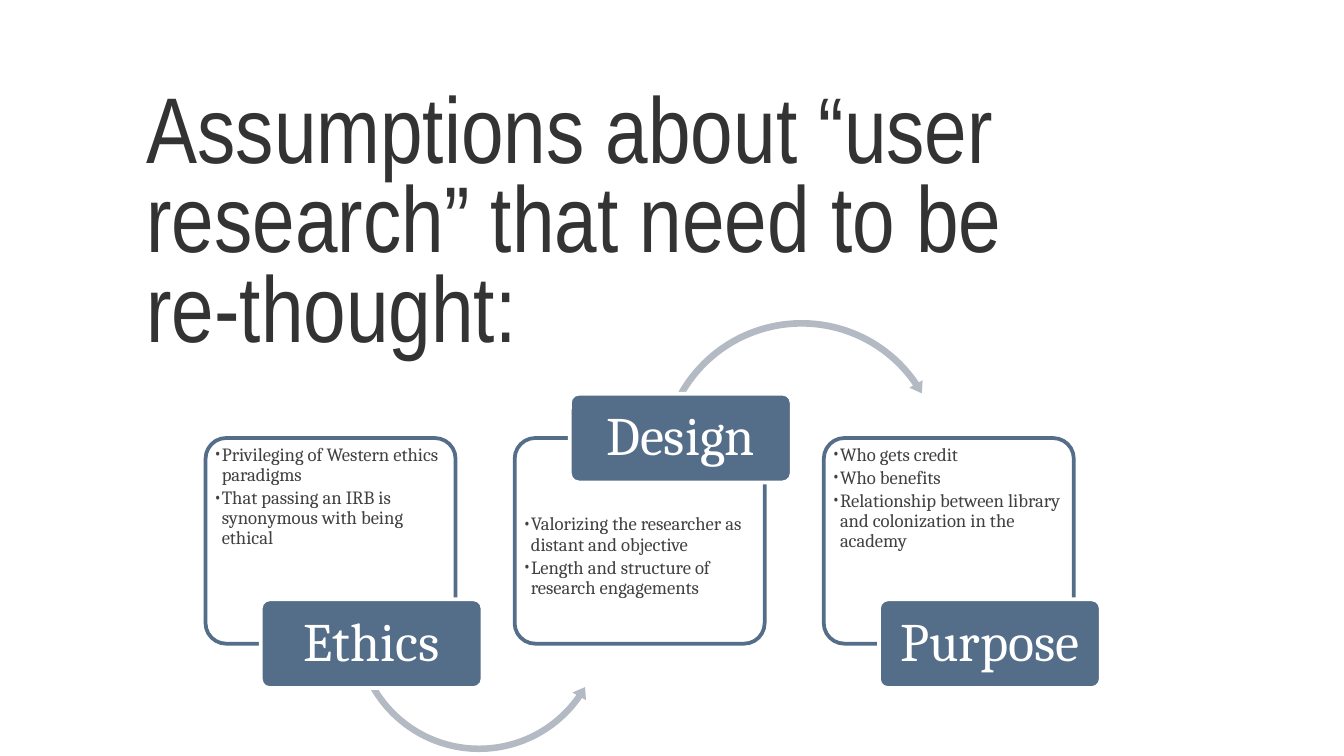
from dataclasses import dataclass
from typing import Optional

from lxml import etree
from pptx import Presentation
from pptx.dml.color import RGBColor
from pptx.enum.shapes import MSO_SHAPE
from pptx.enum.text import MSO_ANCHOR, MSO_AUTO_SIZE, PP_ALIGN
from pptx.oxml.ns import qn
from pptx.util import Inches, Pt

ROUNDED = MSO_SHAPE.ROUNDED_RECTANGLE
ARROW_OVER = MSO_SHAPE.CIRCULAR_ARROW
ARROW_UNDER = MSO_SHAPE.LEFT_CIRCULAR_ARROW
TOP, MIDDLE = MSO_ANCHOR.TOP, MSO_ANCHOR.MIDDLE
LEFT, CENTER = PP_ALIGN.LEFT, PP_ALIGN.CENTER
NO_FIT = MSO_AUTO_SIZE.NONE

WHITE = RGBColor(0xFF, 0xFF, 0xFF)
SLATE = RGBColor(0x54, 0x6D, 0x89)
SILVER = RGBColor(0xB4, 0xBA, 0xC4)
CHARCOAL = RGBColor(0x33, 0x33, 0x33)
BODY_GRAY = RGBColor(0x41, 0x40, 0x42)

TITLE_FONT, BODY_FONT = "Arial Narrow", "Cambria"
TITLE_LINES = ("Assumptions about “user research” that need to be", "re-thought:")
FIRST_LEFT, STEP = 1.53, 2.3
PANEL_TOP = 3.26


@dataclass(frozen=True)
class Arrow:
    kind: int
    left: float
    top: float
    size: float
    adjustments: tuple[float, ...]


@dataclass(frozen=True)
class Step:
    name: str
    points: tuple[str, ...]
    text_top: float
    label_top: float
    arrow: Optional[Arrow] = None


STEPS = (
    Step("Ethics",
         ("Privileging of Western ethics paradigms",
          "That passing an IRB is synonymous with being ethical"),
         3.29, 4.46,
         Arrow(ARROW_UNDER, 2.6, 3.7, 1.93, (0.025, 3.09, 20.85, 90.25, 0.03))),
    Step("Design",
         ("Valorizing the researcher as distant and objective",
          "Length and structure of research engagements"),
         3.81, 2.93,
         Arrow(ARROW_OVER, 4.88, 2.35, 2.17, (0.023, 2.74, 195.51, 125.76, 0.026))),
    Step("Purpose",
         ("Who gets credit", "Who benefits",
          "Relationship between library and colonization in the academy"),
         3.29, 4.46),
)


def set_frame(frame, anchor, horizontal: float, vertical: float) -> None:
    frame.word_wrap = True
    frame.auto_size = NO_FIT
    frame.vertical_anchor = anchor
    frame.margin_left = frame.margin_right = Inches(horizontal)
    frame.margin_top = frame.margin_bottom = Inches(vertical)


def write_lines(frame, lines: tuple[str, ...], font: str, size: float,
                color: RGBColor, align, spacing: float) -> None:
    for index, line in enumerate(lines):
        para = frame.add_paragraph() if index else frame.paragraphs[0]
        para.alignment = align
        para.line_spacing = spacing
        span = para.add_run()
        span.text = line
        span.font.name = font
        span.font.size = Pt(size)
        span.font.color.rgb = color


def add_bullets(frame) -> None:
    for para in frame.paragraphs:
        para.space_after = Pt(1.5)
        properties = para._p.get_or_add_pPr()
        properties.set("marL", str(Inches(0.06)))
        properties.set("indent", str(Inches(-0.06)))
        etree.SubElement(properties, qn("a:buFont")).set("typeface", BODY_FONT)
        etree.SubElement(properties, qn("a:buChar")).set("char", "•")


def add_rounded(page, left: float, top: float, width: float, height: float,
                fill: RGBColor, line: RGBColor):
    box = page.shapes.add_shape(
        ROUNDED, Inches(left), Inches(top), Inches(width), Inches(height))
    box.adjustments[0] = 0.1
    box.shadow.inherit = False
    box.fill.solid()
    box.fill.fore_color.rgb = fill
    box.line.color.rgb = line
    box.line.width = Pt(2)
    return box


def add_arrow(page, arrow: Arrow) -> None:
    curve = page.shapes.add_shape(
        arrow.kind, Inches(arrow.left), Inches(arrow.top),
        Inches(arrow.size), Inches(arrow.size))
    for index, value in enumerate(arrow.adjustments):
        curve.adjustments[index] = value
    curve.shadow.inherit = False
    curve.fill.solid()
    curve.fill.fore_color.rgb = SILVER
    curve.line.fill.background()


def add_step(page, step: Step, left: float) -> None:
    add_rounded(page, left, PANEL_TOP, 1.86, 1.53, WHITE, SLATE)
    points = page.shapes.add_textbox(
        Inches(left + 0.04), Inches(step.text_top), Inches(1.79), Inches(0.95))
    set_frame(points.text_frame, TOP, 0.02, 0.02)
    write_lines(points.text_frame, step.points, BODY_FONT, 10, BODY_GRAY, LEFT, 0.9)
    add_bullets(points.text_frame)
    if step.arrow:
        add_arrow(page, step.arrow)
    label = add_rounded(page, left + 0.41, step.label_top, 1.65, 0.66, SLATE, WHITE)
    set_frame(label.text_frame, MIDDLE, 0.06, 0.04)
    write_lines(label.text_frame, (step.name,), BODY_FONT, 29, WHITE, CENTER, 0.9)


def add_title(page) -> None:
    title = page.shapes.title
    title.left, title.top = Inches(0.99), Inches(0.63)
    title.width, title.height = Inches(8.01), Inches(0.54)
    set_frame(title.text_frame, TOP, 0.1, 0.05)
    write_lines(title.text_frame, TITLE_LINES, TITLE_FONT, 50, CHARCOAL, LEFT, 0.8)


def main() -> None:
    deck = Presentation()
    deck.slide_width = Inches(10)
    deck.slide_height = deck.slide_width * 9 // 16
    page = deck.slides.add_slide(deck.slide_layouts[5])
    for index, step in enumerate(STEPS):
        add_step(page, step, FIRST_LEFT + index * STEP)
    add_title(page)
    deck.save("out.pptx")


if __name__ == "__main__":
    main()
